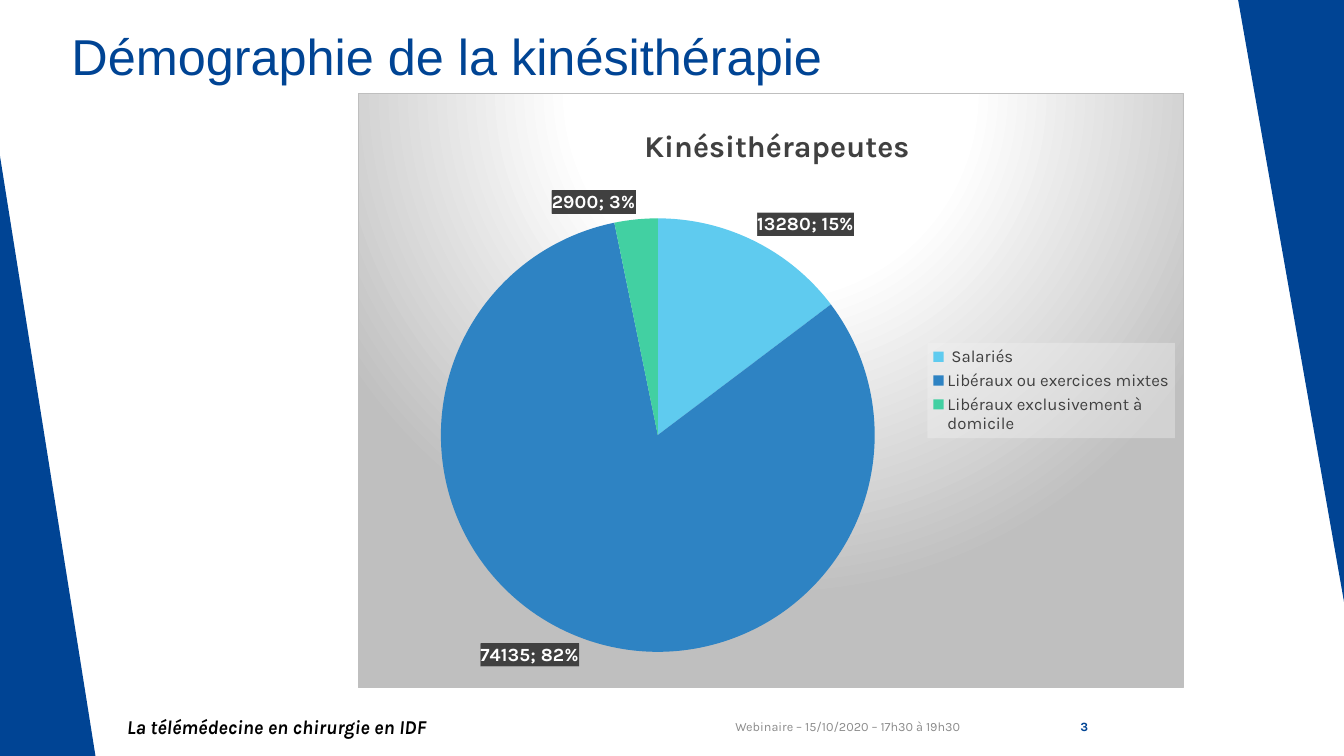
from lxml import etree
from pptx import Presentation
from pptx.chart.data import CategoryChartData
from pptx.dml.color import RGBColor
from pptx.enum.chart import XL_CHART_TYPE, XL_LABEL_POSITION, XL_LEGEND_POSITION
from pptx.enum.shapes import MSO_SHAPE
from pptx.enum.text import MSO_ANCHOR, PP_ALIGN
from pptx.oxml import parse_xml
from pptx.oxml.ns import qn
from pptx.util import Inches, Pt

TRIANGLE = MSO_SHAPE.RIGHT_TRIANGLE
TOP, MIDDLE = MSO_ANCHOR.TOP, MSO_ANCHOR.MIDDLE
LEFT, RIGHT = PP_ALIGN.LEFT, PP_ALIGN.RIGHT

THEME = {
    "blue": "004494", "grey": "8C8C8C", "black": "000000", "white": "FFFFFF",
    "dark": "404040", "silver": "BFBFBF", "pale": "F2F2F2", "stripe": "595959",
    "heading": "Arial", "body": "Karla",
    "title": 36, "footer": 14, "small": 9, "chart": 10,
    "chart_title": 21.6, "legend": 12, "label": 13.3,
}

TEXTS = [
    ("Démographie de la kinésithérapie", (0.61, 0.2, 9.4, 1.44),
     "title", "heading", "blue", False, False, LEFT, TOP),
    ("Webinaire – 15/10/2020 – 17h30 à 19h30", (7.02, 7.01, 2.6, 0.4),
     "small", "body", "grey", False, False, RIGHT, MIDDLE),
    ("La télémédecine en chirurgie en IDF", (1.16, 7.01, 5.35, 0.4),
     "footer", "body", "black", True, True, LEFT, MIDDLE),
    ("3", (10.14, 7.01, 0.75, 0.4),
     "small", "body", "blue", True, False, RIGHT, MIDDLE),
]
CORNERS = [((0, 1.55, 0.95, 5.97), 0), ((12.28, 0, 1.05, 5.97), 180)]

CHART_TITLE = "Kinésithérapeutes"
CHART_BOX = (3.55, 0.92, 8.19, 5.91)
PRACTITIONERS = [
    (" Salariés ", 13280, "5FCBEF"),
    ("Libéraux ou exercices mixtes", 74135, "2E83C3"),
    ("Libéraux exclusivement à domicile", 2900, "42D0A2"),
]
PIE_AREA = {"x": 0.1, "y": 0.21, "w": 0.526, "h": 0.73}
TITLE_AREA = {"x": 0.34, "y": 0.045}
LEGEND_AREA = {"x": 0.69, "y": 0.42, "w": 0.3, "h": 0.16}

NAMESPACES = (
    'xmlns:c="http://schemas.openxmlformats.org/drawingml/2006/chart" '
    'xmlns:a="http://schemas.openxmlformats.org/drawingml/2006/main"'
)


def color(name):
    return RGBColor.from_string(THEME[name])


def solid(name, opacity=100):
    return (f'<a:solidFill><a:srgbClr val="{THEME[name]}">'
            f'<a:alpha val="{opacity * 1000}"/></a:srgbClr></a:solidFill>')


def properties(content):
    return parse_xml(f"<c:spPr {NAMESPACES}>{content}</c:spPr>")


def set_font(font, size, face, shade, bold=False, italic=False):
    font.size, font.name = Pt(THEME[size]), THEME[face]
    font.color.rgb = color(shade)
    font.bold, font.italic = bold, italic


def area_layout(area, inner=False):
    layout = etree.Element(qn("c:layout"))
    manual = etree.SubElement(layout, qn("c:manualLayout"))
    if inner:
        etree.SubElement(manual, qn("c:layoutTarget"), val="inner")
    for key in ("x", "y"):
        etree.SubElement(manual, qn(f"c:{key}Mode"), val="edge")
    for key, share in area.items():
        etree.SubElement(manual, qn(f"c:{key}"), val=str(share))
    return layout


def place(parent, area, after=None, inner=False):
    for old in parent.findall(qn("c:layout")):
        parent.remove(old)
    layout = area_layout(area, inner)
    if after is None:
        parent.insert(0, layout)
    else:
        parent.find(qn(after)).addnext(layout)


def add_corner(slide, box, rotation):
    corner = slide.shapes.add_shape(TRIANGLE, *map(Inches, box))
    corner.rotation = rotation
    corner.shadow.inherit = False
    corner.fill.solid()
    corner.fill.fore_color.rgb = color("blue")
    corner.line.fill.background()


def add_text(slide, wording, box, size, face, shade, bold, italic, align, anchor):
    frame = slide.shapes.add_textbox(*map(Inches, box)).text_frame
    frame.word_wrap = True
    frame.vertical_anchor = anchor
    paragraph = frame.paragraphs[0]
    paragraph.text = wording
    paragraph.alignment = align
    set_font(paragraph.font, size, face, shade, bold, italic)


def add_pie(slide):
    names, counts, shades = zip(*PRACTITIONERS)
    data = CategoryChartData()
    data.categories = names
    data.add_series(CHART_TITLE, counts)
    chart = slide.shapes.add_chart(
        XL_CHART_TYPE.PIE, *map(Inches, CHART_BOX), data).chart
    set_font(chart.font, "chart", "body", "black")

    chart.has_title = True
    heading = chart.chart_title.text_frame.paragraphs[0]
    heading.text = CHART_TITLE
    set_font(heading.font, "chart_title", "body", "dark", True)
    chart.chart_title.include_in_layout = False

    chart.has_legend = True
    legend = chart.legend
    legend.position = XL_LEGEND_POSITION.RIGHT
    legend.include_in_layout = False
    set_font(legend.font, "legend", "body", "dark")

    plot = chart.plots[0]
    plot.vary_by_categories = True
    series = plot.series[0]
    for index, shade in enumerate(shades):
        fill = series.points[index].format.fill
        fill.solid()
        fill.fore_color.rgb = RGBColor.from_string(shade)

    labels = series.data_labels
    labels.show_value = labels.show_percentage = True
    labels.position = XL_LABEL_POSITION.OUTSIDE_END
    set_font(labels.font, "label", "body", "white", True)

    style_chart(chart, legend, labels)


def style_chart(chart, legend, labels):
    root = chart.element if hasattr(chart, "element") else chart._chartSpace
    title = root.find(".//" + qn("c:title"))
    place(title, TITLE_AREA, "c:tx")
    place(legend._element, LEGEND_AREA, "c:legendPos")
    place(root.find(".//" + qn("c:plotArea")), PIE_AREA, inner=True)

    legend._element.find(qn("c:txPr")).addprevious(properties(solid("pale", 39)))
    label_xml = labels._element
    label_xml.find(qn("c:txPr")).addprevious(properties(
        f'<a:pattFill prst="dkVert"><a:fgClr><a:srgbClr val="{THEME["dark"]}"/></a:fgClr>'
        f'<a:bgClr><a:srgbClr val="{THEME["stripe"]}"/></a:bgClr></a:pattFill>'))
    separator = etree.Element(qn("c:separator"))
    separator.text = "; "
    label_xml.find(qn("c:showBubbleSize")).addnext(separator)

    stops = "".join(
        f'<a:gs pos="{position * 1000}"><a:srgbClr val="{THEME[name]}"/></a:gs>'
        for position, name in [(0, "white"), (39, "white"), (100, "silver")])
    root.find(qn("c:chart")).addnext(properties(
        f'<a:gradFill><a:gsLst>{stops}</a:gsLst><a:path path="circle">'
        '<a:fillToRect l="50000" t="-80000" r="50000" b="180000"/></a:path></a:gradFill>'
        f'<a:ln w="9525">{solid("silver")}</a:ln>'))


def main():
    deck = Presentation()
    deck.slide_width, deck.slide_height = Inches(13.33), Inches(7.5)
    slide = deck.slides.add_slide(deck.slide_layouts[6])
    for box, rotation in CORNERS:
        add_corner(slide, box, rotation)
    for text in TEXTS:
        add_text(slide, *text)
    add_pie(slide)
    deck.save("out.pptx")


if __name__ == "__main__":
    main()
